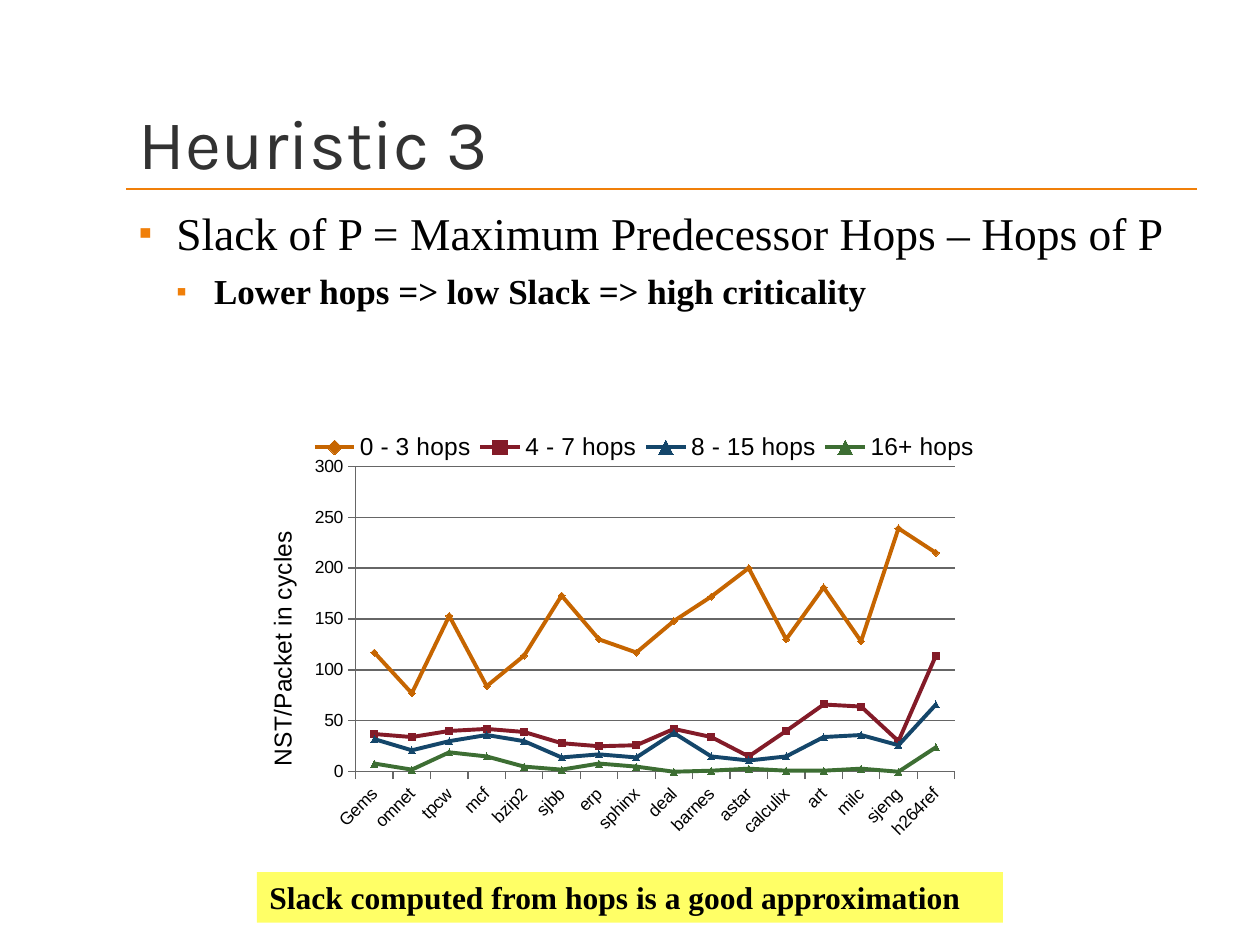
from pptx import Presentation
from pptx.chart.data import CategoryChartData
from pptx.dml.color import RGBColor
from pptx.enum.chart import XL_CHART_TYPE, XL_LEGEND_POSITION, XL_MARKER_STYLE, XL_TICK_MARK
from pptx.enum.shapes import MSO_CONNECTOR, MSO_SHAPE
from pptx.enum.text import MSO_ANCHOR, MSO_AUTO_SIZE, PP_ALIGN
from pptx.oxml import parse_xml
from pptx.oxml.ns import nsdecls, qn
from pptx.util import Cm, Pt

COLORS = {
    "text": "000000", "title": "323232", "accent": "F07F09", "note": "FFFF66",
    "grid": "666666", "near": "C66500", "mid": "831B28", "far": "14466A",
    "last": "3D6E33",
}
SERIF = "Times New Roman"
NAMES = ["Gems", "omnet", "tpcw", "mcf", "bzip2", "sjbb", "erp", "sphinx", "deal",
         "barnes", "astar", "calculix", "art", "milc", "sjeng", "h264ref"]
HOPS = [
    ("0 - 3 hops", "near", XL_MARKER_STYLE.DIAMOND,
     (117, 77, 153, 84, 114, 173, 130, 117, 148, 172, 200, 130, 181, 128, 239, 215)),
    ("4 - 7 hops", "mid", XL_MARKER_STYLE.SQUARE,
     (37, 34, 40, 42, 39, 28, 25, 26, 42, 34, 15, 40, 66, 64, 30, 114)),
    ("8 - 15 hops", "far", XL_MARKER_STYLE.TRIANGLE,
     (32, 21, 30, 36, 30, 14, 17, 14, 38, 15, 11, 15, 34, 36, 26, 66)),
    ("16+ hops", "last", XL_MARKER_STYLE.TRIANGLE,
     (8, 2, 19, 15, 5, 2, 8, 5, 0, 1, 3, 1, 1, 3, 0, 24)),
]


def tint(key):
    """Return the named colour."""
    return RGBColor.from_string(COLORS[key])


def style(font, size, name, key="text", bold=False):
    """Format a font."""
    font.size, font.name, font.bold = Pt(size), name, bold
    font.color.rgb = tint(key)


def place(shape, box):
    """Move a shape into a box."""
    shape.left, shape.top, shape.width, shape.height = box


def bullet(para, left):
    """Give a paragraph a square accent bullet and a hanging indent."""
    props = para._p.get_or_add_pPr()
    props.set("marL", str(left))
    props.set("indent", str(-Cm(0.76)))
    for xml in (f'<a:buClr {nsdecls("a")}><a:srgbClr val="{COLORS["accent"]}"/></a:buClr>',
                f'<a:buSzPct {nsdecls("a")} val="85000"/>',
                f'<a:buFont {nsdecls("a")} typeface="{SERIF}"/>',
                f'<a:buChar {nsdecls("a")} char="▪"/>'):
        props.append(parse_xml(xml))


def add_title(slide, box):
    """Fill the title and rule a line under it."""
    left, top, width, height = box
    title = slide.shapes.title
    place(title, box)
    frame = title.text_frame
    frame.text = "Heuristic 3"
    frame.auto_size = MSO_AUTO_SIZE.NONE
    frame.vertical_anchor = MSO_ANCHOR.BOTTOM
    frame.margin_bottom = Cm(0.25)
    para = frame.paragraphs[0]
    para.alignment = PP_ALIGN.LEFT
    style(para.runs[0].font, 40, "Karla", "title")
    y = top + height - Cm(0.13)
    rule = slide.shapes.add_connector(MSO_CONNECTOR.STRAIGHT, left, y, left + width, y)
    rule.line.color.rgb = tint("accent")
    rule.line.width = Pt(1.5)
    rule.element.spPr.append(parse_xml(f'<a:effectLst {nsdecls("a")}/>'))


def add_list(slide, box):
    """Fill the body with the two bullet points."""
    body = slide.placeholders[1]
    place(body, box)
    frame = body.text_frame
    frame.text = ("Slack of P = Maximum Predecessor Hops – Hops of P\n"
                  "Lower hops => low Slack => high criticality")
    frame.auto_size = MSO_AUTO_SIZE.NONE
    for level, (para, size) in enumerate(zip(frame.paragraphs, (26, 20))):
        para.level = level
        para.space_before = Pt(5.8)
        bullet(para, Cm(0.76) * (level + 1))
        style(para.runs[0].font, size, SERIF, bold=level == 1)


def arrange(node, index, inner=False, **parts):
    """Set the manual layout of a chart part."""
    for old in node.findall(qn("c:layout")):
        node.remove(old)
    target = '<c:layoutTarget val="inner"/>' if inner else ""
    modes = "".join(f'<c:{k}Mode val="edge"/>' for k in "xy")
    sizes = "".join(f'<c:{k} val="{v}"/>' for k, v in parts.items())
    node.insert(index, parse_xml(
        f'<c:layout {nsdecls("c")}><c:manualLayout>{target}{modes}{sizes}'
        f'</c:manualLayout></c:layout>'))


def format_axes(chart):
    """Format both axes, the grid and the value title."""
    for axis in (chart.category_axis, chart.value_axis):
        style(axis.tick_labels.font, 10, "Arial")
        axis.major_tick_mark = XL_TICK_MARK.OUTSIDE
        axis.format.line.color.rgb = tint("grid")
    chart.element.xpath(".//c:catAx/c:txPr/a:bodyPr")[0].set("rot", "-2700000")
    axis = chart.value_axis
    axis.minimum_scale, axis.maximum_scale, axis.major_unit = 0, 300, 50
    axis.tick_labels.number_format = "0"
    axis.tick_labels.number_format_is_linked = False
    axis.major_gridlines.format.line.color.rgb = tint("grid")
    frame = axis.axis_title.text_frame
    frame.text = "NST/Packet in cycles"
    style(frame.paragraphs[0].runs[0].font, 14, "Arial")
    title = chart.element.xpath(".//c:valAx/c:title")[0]
    title.xpath(".//a:bodyPr")[0].set("rot", "-5400000")
    arrange(title, 1, x=0, y=0.29)


def add_graph(slide, box):
    """Draw the line chart of slack by hops."""
    data = CategoryChartData()
    data.categories = NAMES
    for name, _, _, vals in HOPS:
        data.add_series(name, vals)
    chart = slide.shapes.add_chart(XL_CHART_TYPE.LINE_MARKERS, *box, data).chart
    style(chart.font, 10, "Arial")
    chart.has_title = False
    plot = chart.plots[0]
    plot.vary_by_categories = False
    for line, (_, key, mark, _) in zip(plot.series, HOPS):
        line.smooth = False
        line.format.line.color.rgb = tint(key)
        line.format.line.width = Pt(2.25)
        line.marker.style, line.marker.size = mark, 4
        line.marker.format.fill.solid()
        line.marker.format.fill.fore_color.rgb = tint(key)
        line.marker.format.line.color.rgb = tint(key)
    chart.has_legend = True
    chart.legend.position = XL_LEGEND_POSITION.TOP
    chart.legend.include_in_layout = False
    style(chart.legend.font, 14, "Arial")
    format_axes(chart)
    arrange(chart.element.xpath(".//c:legend")[0], 1, x=0.06, y=0.12, w=0.94, h=0.05)
    arrange(chart.element.xpath(".//c:plotArea")[0], 0, True,
            x=0.13, y=0.18, w=0.83, h=0.56)


def add_note(slide, box):
    """Add the highlighted conclusion."""
    note = slide.shapes.add_shape(MSO_SHAPE.RECTANGLE, *box)
    note.shadow.inherit = False
    note.fill.solid()
    note.fill.fore_color.rgb = tint("note")
    note.line.fill.background()
    frame = note.text_frame
    frame.text = "Slack computed from hops is a good approximation"
    frame.vertical_anchor = MSO_ANCHOR.TOP
    frame.paragraphs[0].alignment = PP_ALIGN.LEFT
    style(frame.paragraphs[0].runs[0].font, 18, SERIF, bold=True)


def main():
    """Build the slide and save it."""
    deck = Presentation()
    deck.slide_width, deck.slide_height = Cm(25.4), Cm(19.05)
    slide = deck.slides.add_slide(deck.slide_layouts[1])
    add_title(slide, (Cm(2.54), Cm(0.76), Cm(21.59), Cm(3.18)))
    add_list(slide, (Cm(2.54), Cm(4.01), Cm(21.59), Cm(12.7)))
    add_graph(slide, (Cm(5.28), Cm(7.42), Cm(14.55), Cm(11)))
    add_note(slide, (Cm(5.18), Cm(17.58), Cm(15.04), Cm(1.02)))
    deck.save("out.pptx")


if __name__ == "__main__":
    main()
